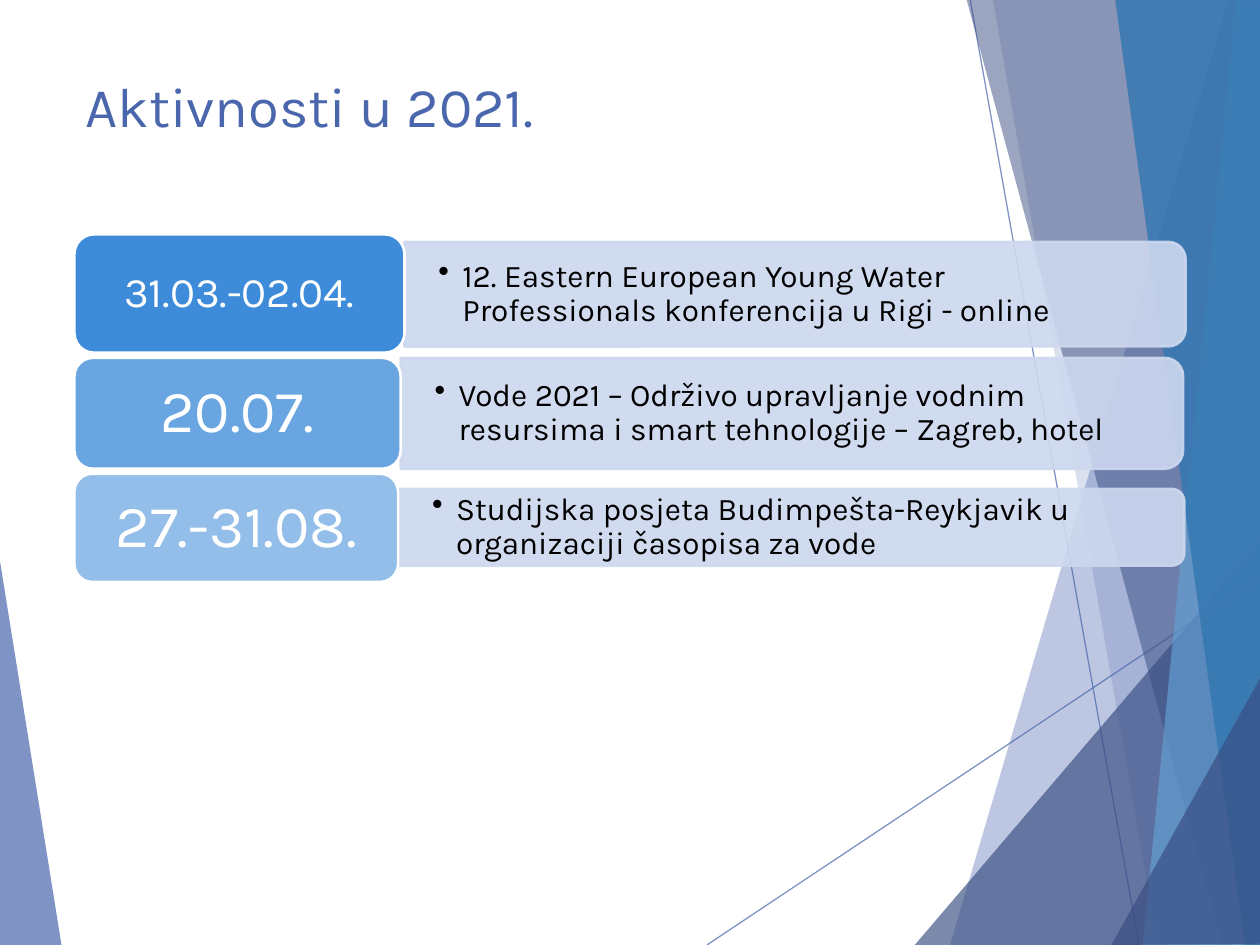
from pptx import Presentation
from pptx.dml.color import RGBColor
from pptx.enum.shapes import MSO_CONNECTOR as Connector, MSO_SHAPE as Shape
from pptx.enum.text import MSO_ANCHOR as Anchor, PP_ALIGN as Align
from pptx.oxml.ns import qn
from pptx.util import Inches, Pt
from lxml.etree import SubElement

BLUE, NAVY, SKY, STEEL = "4A66AC", "384C81", "629DD1", "3477B2"
FACETS = [
    (BLUE, 36, [(9.75, 0), (7.54, 7.5), (10.02, 7.51), (10.01, 0.01)]),
    (BLUE, 20, [(7.88, -0.01), (9.19, 7.5), (10.01, 7.5), (10.01, -0.01)]),
    (NAVY, 66, [(7.26, 7.5), (10, 4.29), (10.01, 7.5)]),
    (NAVY, 50, [(7.67, -0.01), (9.7, 7.5), (10.01, 7.49), (10.01, -0.01)]),
    (SKY, 70, [(9.81, -0.01), (9.07, 7.5), (10.01, 7.5), (10, -0.01)]),
    (STEEL, 82, [(8.85, -0.01), (9.88, 7.5), (10.02, 7.5), (10, -0.01)]),
    (NAVY, 66, [(8.82, 7.5), (10.02, 5.35), (10.02, 7.49)]),
]
ACTIVITIES = [
    ("31.03.-02.04.", 24, 90, (0.59, 1.86, 2.62, 0.94), (3.21, 1.92, 6.2, 0.83),
     "12. Eastern European Young Water Professionals konferencija u Rigi - online"),
    ("20.07.", 34, 70, (0.59, 2.84, 2.59, 0.88), (3.18, 2.84, 6.21, 0.88),
     "Vode 2021 – Održivo upravljanje vodnim resursima i smart tehnologije – Zagreb, hotel"),
    ("27.-31.08.", 34, 50, (0.59, 3.76, 2.57, 0.86), (3.16, 3.88, 6.24, 0.61),
     "Studijska posjeta Budimpešta-Reykjavik u organizaciji časopisa za vode"),
]


def paint(fill, color, opacity=100):
    """Give a fill a solid hex colour with an opacity in percent."""
    fill.solid()
    fill.fore_color.rgb = RGBColor.from_string(color)
    if opacity < 100:
        srgb = fill._xPr.find(qn("a:solidFill")).find(qn("a:srgbClr"))
        SubElement(srgb, qn("a:alpha"), val=str(opacity * 1000))


def write(frame, text, size, color, font="Karla", align=Align.LEFT, anchor=Anchor.MIDDLE,
          spacing=None, insets=(0.1, 0.05), indent=0, bullet=None):
    """Write one formatted paragraph into a text frame."""
    frame.word_wrap = True
    frame.vertical_anchor = anchor
    frame.margin_left = frame.margin_right = Inches(insets[0])
    frame.margin_top = frame.margin_bottom = Inches(insets[1])
    paragraph = frame.paragraphs[0]
    paragraph.alignment, paragraph.line_spacing = align, spacing
    props = paragraph._p.get_or_add_pPr()
    props.set("marL", str(Inches(indent)))
    if bullet:
        props.set("indent", str(-Inches(indent)))
        SubElement(props, qn("a:buChar"), char=bullet)
    run = paragraph.add_run()
    run.text = text
    run.font.name, run.font.size = font, Pt(size)
    run.font.color.rgb = RGBColor.from_string(color)


class ActivitySlide:
    """Draw the elements of the activity slide in one style."""

    def __init__(self, slide):
        self.shapes = slide.shapes
        self.accent, self.date_fill, self.bar_fill = BLUE, "297FD5", "CDD8EF"
        self.white, self.black = "FFFFFF", "000000"

    def facet(self, color, opacity, points):
        """Draw a translucent polygon."""
        corners = [(Inches(x), Inches(y)) for x, y in points]
        builder = self.shapes.build_freeform(*corners[0])
        builder.add_line_segments(corners[1:], close=True)
        polygon = builder.convert_to_shape()
        polygon.shadow.inherit = False
        paint(polygon.fill, color, opacity)
        polygon.line.fill.background()

    def ray(self, *ends):
        """Draw a thin translucent line."""
        ray = self.shapes.add_connector(Connector.STRAIGHT, *map(Inches, ends))
        ray.line.width = Pt(0.75)
        paint(ray.line.fill, self.accent, 70)
        SubElement(ray._element.spPr, qn("a:effectLst"))

    def box(self, kind, place, color, opacity, edge, edge_opacity=100):
        """Draw a filled and outlined preset shape."""
        box = self.shapes.add_shape(kind, *map(Inches, place))
        box.shadow.inherit = False
        paint(box.fill, color, opacity)
        box.line.width = Pt(1.5)
        paint(box.line.fill, edge, edge_opacity)
        return box

    def label(self, place, text, size, color, **style):
        """Add a text box."""
        label = self.shapes.add_textbox(*map(Inches, place))
        write(label.text_frame, text, size, color, **style)

    def bar(self, left, top, length, thickness, text):
        """Draw a bar rounded on its right side, with a bulleted text."""
        shift = (length - thickness) / 2
        upright = (left + shift, top - shift, thickness, length)
        bar = self.box(Shape.ROUND_2_SAME_RECTANGLE, upright, self.bar_fill, 90, self.bar_fill, 90)
        bar.rotation = 90
        self.label((left, top + 0.04, length - 0.04, thickness - 0.08), text, 18, self.black,
                   spacing=0.9, insets=(0.27, 0.14), indent=0.19, bullet="•")

    def date(self, place, text, size, opacity):
        """Draw a rounded date tile."""
        left, top, width, height = place
        self.box(Shape.ROUNDED_RECTANGLE, place, self.date_fill, opacity, self.white)
        self.label((left + 0.04, top + 0.04, width - 0.08, height - 0.08), text, size, self.white,
                   align=Align.CENTER, spacing=0.9, insets=(0.14, 0.07))


def main():
    """Build and save the slide."""
    deck = Presentation()
    deck.slide_width, deck.slide_height = Inches(10), Inches(7.5)
    page = ActivitySlide(deck.slides.add_slide(deck.slide_layouts[6]))
    page.facet(BLUE, 70, [(-0.01, 4.39), (0.49, 7.51), (-0.01, 7.5)])
    page.ray(5.61, 7.5, 10.01, 4.57)
    page.ray(7.7, 0, 9.04, 7.5)
    for facet in FACETS:
        page.facet(*facet)
    page.label((0.51, 0.52, 9.13, 1.02), "Aktivnosti u 2021.", 32, BLUE,
               anchor=Anchor.TOP, indent=0.07)
    for date, size, opacity, tile, bar, event in ACTIVITIES:
        page.bar(*bar, event)
        page.date(tile, date, size, opacity)
    deck.save("out.pptx")


if __name__ == "__main__":
    main()
